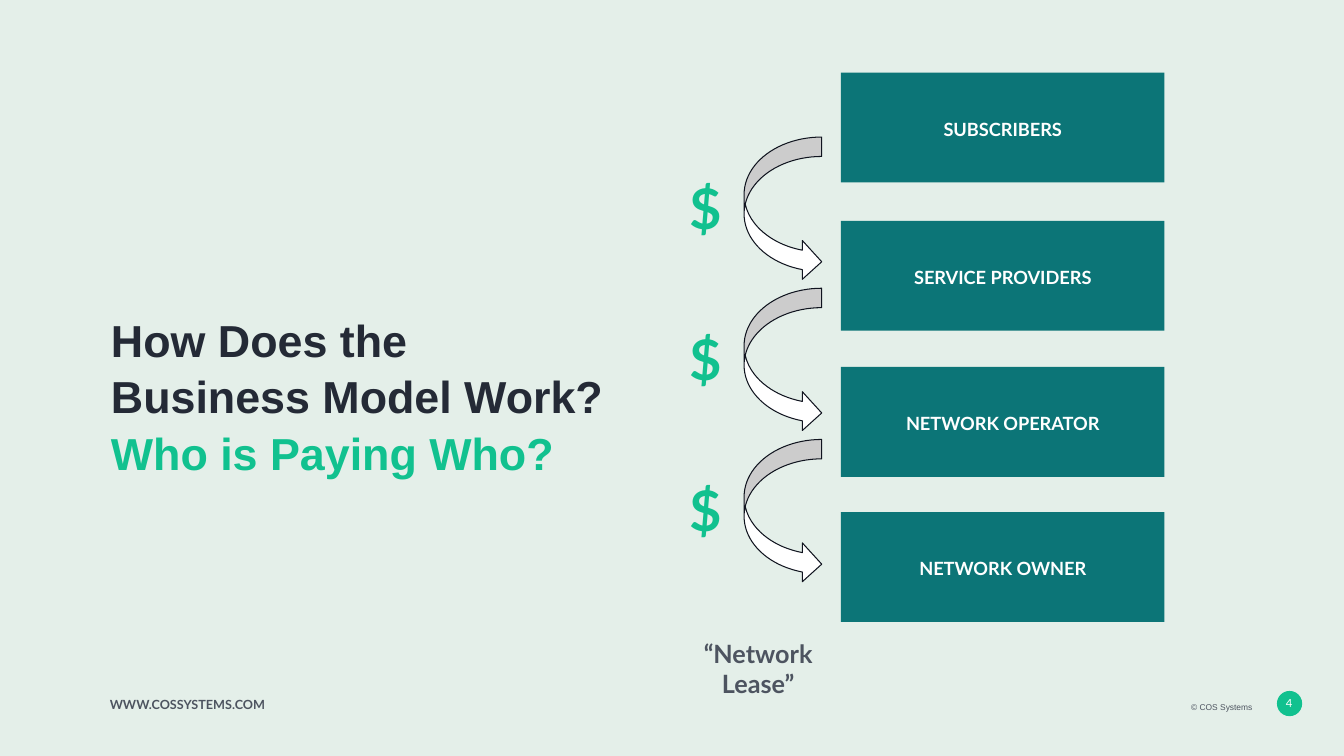
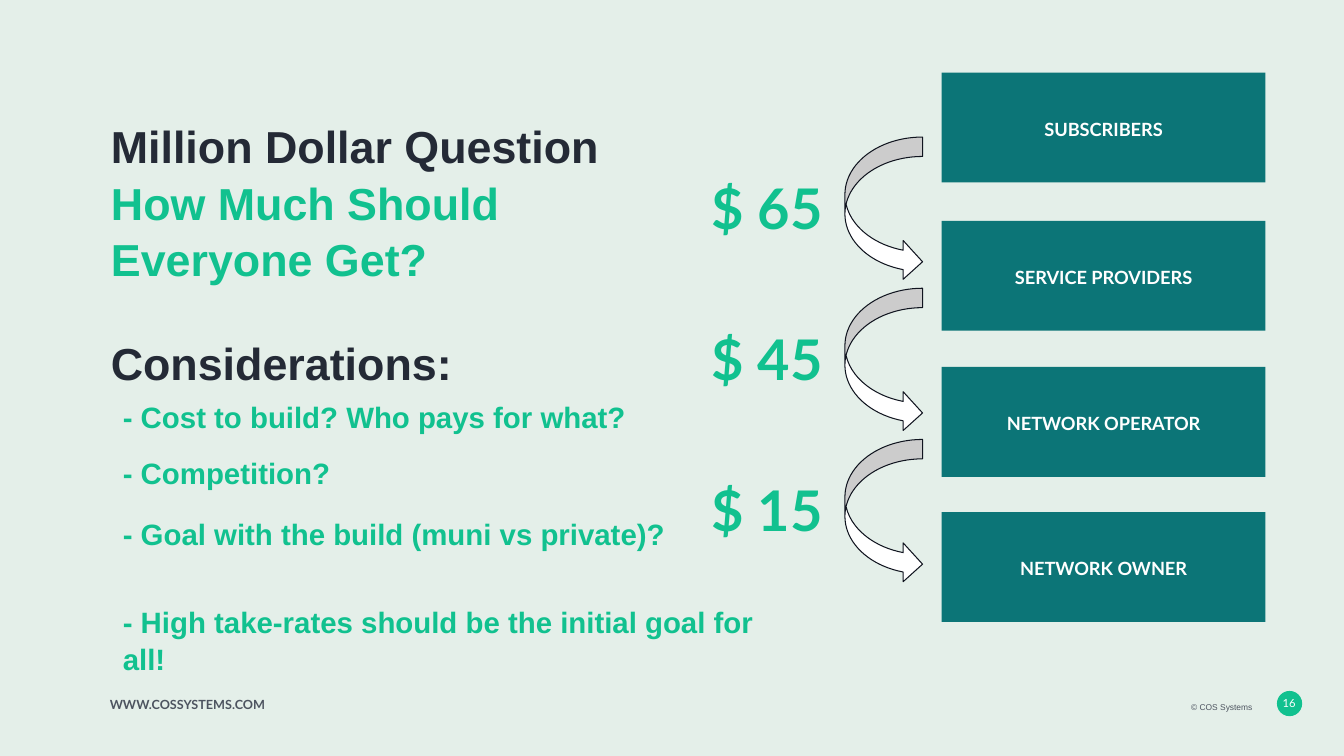
from pptx import Presentation
from pptx.dml.color import RGBColor
from pptx.enum.shapes import MSO_SHAPE
from pptx.enum.text import MSO_ANCHOR, MSO_AUTO_SIZE, PP_ALIGN
from pptx.util import Inches, Pt

MINT = RGBColor(0xE4, 0xEF, 0xE9)
GREEN = RGBColor(0x11, 0xC1, 0x8F)
TEAL = RGBColor(0x0C, 0x75, 0x77)
NAVY = RGBColor(0x24, 0x2A, 0x36)
GRAY = RGBColor(0x4D, 0x54, 0x60)
INK = RGBColor(0x10, 0x14, 0x1F)
WHITE = RGBColor(0xFF, 0xFF, 0xFF)

HEADING = {"name": "Arial", "size": Pt(32), "bold": True}
CONSIDERATION = {"name": "Arial", "size": Pt(21), "bold": True}
ROLE = {"name": "Lato", "size": Pt(13), "bold": True}
AMOUNT = {"name": "Lato", "size": Pt(40), "bold": True}
LEASE = {"name": "Lato", "size": Pt(18), "bold": True}
ADDRESS = {"name": "Lato", "size": Pt(9), "bold": True}
COPYRIGHT = {"name": "Arial", "size": Pt(6)}
PAGE_NUMBER = {"name": "Lato", "size": Pt(8)}

ROLE_TOPS = {
    "SUBSCRIBERS": 0.72,
    "SERVICE PROVIDERS": 2.19,
    "NETWORK OPERATOR": 3.64,
    "NETWORK OWNER": 5.08,
}
PAYMENT_TOP, PAYMENT_STEP = 1.62, 1.5


def set_font(font, style, color):
    for attribute, value in style.items():
        setattr(font, attribute, value)
    font.color.rgb = color


def set_frame(frame, anchor=MSO_ANCHOR.TOP, inset=0.05):
    settings = {
        "word_wrap": True,
        "auto_size": MSO_AUTO_SIZE.NONE,
        "vertical_anchor": anchor,
        "margin_left": Inches(0.1),
        "margin_right": Inches(0.1),
        "margin_top": Inches(inset),
        "margin_bottom": Inches(inset),
    }
    for attribute, value in settings.items():
        setattr(frame, attribute, value)


def write(paragraph, text, style, color, align=PP_ALIGN.LEFT, spacing=1.0):
    paragraph.alignment = align
    paragraph.line_spacing = spacing
    run = paragraph.add_run()
    run.text = text
    set_font(run.font, style, color)


def add_text(slide, box, text, style, color, align=PP_ALIGN.LEFT,
             spacing=1.0, anchor=MSO_ANCHOR.TOP, inset=0.05):
    frame = slide.shapes.add_textbox(*map(Inches, box)).text_frame
    set_frame(frame, anchor, inset)
    write(frame.paragraphs[0], text, style, color, align, spacing)


def add_preset(slide, preset, box, fill, line=None):
    shape = slide.shapes.add_shape(preset, *map(Inches, box))
    shape.shadow.inherit = False
    shape.fill.solid()
    shape.fill.fore_color.rgb = fill
    if line is None:
        shape.line.fill.background()
    else:
        shape.line.color.rgb = line
        shape.line.width = Pt(0.75)
    return shape


def add_title(slide, top, question, emphasis):
    """Place a title whose second part is green on a new line."""
    title = slide.shapes.title
    title.left, title.top = Inches(1), Inches(top)
    title.width, title.height = Inches(5.19), Inches(1.79)
    set_frame(title.text_frame, MSO_ANCHOR.MIDDLE)
    paragraph = title.text_frame.paragraphs[0]
    write(paragraph, question, HEADING, NAVY, spacing=1.05)
    paragraph.add_line_break()
    write(paragraph, emphasis, HEADING, GREEN, spacing=1.05)


def add_footer(slide, number):
    add_preset(slide, MSO_SHAPE.OVAL, (12.67, 6.86, 0.24, 0.24), GREEN, GREEN)
    add_text(slide, (12.47, 6.77, 0.63, 0.41), number, PAGE_NUMBER, WHITE,
             PP_ALIGN.CENTER, anchor=MSO_ANCHOR.MIDDLE)
    add_text(slide, (8.21, 6.9, 4.31, 0.2), "© COS Systems", COPYRIGHT, GRAY,
             PP_ALIGN.RIGHT, 1.15)
    add_text(slide, (0.99, 6.86, 3.69, 0.25), "WWW.COSSYSTEMS.COM", ADDRESS, GRAY)


def add_payment_chain(slide, left, amounts, amount_left, amount_width):
    """Stack the roles and link each to the next with an arrow and amount."""
    for role, top in ROLE_TOPS.items():
        block = add_preset(slide, MSO_SHAPE.RECTANGLE, (left, top, 3.21, 1.09), TEAL)
        set_frame(block.text_frame, MSO_ANCHOR.MIDDLE, 0.1)
        write(block.text_frame.paragraphs[0], role, ROLE, WHITE,
              PP_ALIGN.CENTER, 1.15)
    for index, amount in enumerate(amounts):
        top = PAYMENT_TOP + index * PAYMENT_STEP
        arrow = add_preset(slide, MSO_SHAPE.CURVED_UP_ARROW,
                           (left - 1.29, top + 0.07, 1.43, 0.77), WHITE, INK)
        arrow.rotation = 90
        add_text(slide, (amount_left, top, amount_width, 0.77), amount,
                 AMOUNT, GREEN, inset=0.1)


def add_considerations(slide):
    add_text(slide, (1, 3.35, 6.11, 0.46), "Considerations:", HEADING, NAVY,
             spacing=1.05, anchor=MSO_ANCHOR.MIDDLE)
    frame = slide.shapes.add_textbox(
        Inches(1.12), Inches(3.89), Inches(6.46), Inches(2.8)).text_frame
    set_frame(frame)
    considerations = (
        ("- Cost to build? Who pays for what?", 0),
        ("- Competition?", 14),
        ("- Goal with the build (muni vs private)?", 17),
        ("- High take-rates should be the initial goal for all!", 36),
    )
    for index, (text, gap) in enumerate(considerations):
        paragraph = frame.add_paragraph() if index else frame.paragraphs[0]
        paragraph.space_before = Pt(gap)
        write(paragraph, text, CONSIDERATION, GREEN, spacing=1.05)


def add_slide(deck, number, title_top, question, emphasis):
    slide = deck.slides.add_slide(deck.slide_layouts[5])
    add_title(slide, title_top, question, emphasis)
    add_footer(slide, number)
    return slide


def main():
    deck = Presentation()
    deck.slide_width, deck.slide_height = Inches(13.33), Inches(7.5)
    background = deck.slide_master.background.fill
    background.solid()
    background.fore_color.rgb = MINT

    payers = add_slide(deck, "4", 3.02, "How Does the Business Model Work?",
                       "Who is Paying Who?")
    add_payment_chain(payers, 8.34, ["$"] * 3, 6.74, 0.54)
    add_text(payers, (6.74, 6.23, 1.56, 0.77), "“Network Lease”", LEASE, GRAY,
             PP_ALIGN.CENTER, inset=0.1)

    shares = add_slide(deck, "16", 1.1, "Million Dollar Question",
                       "How Much Should Everyone Get?")
    add_payment_chain(shares, 9.34, ["$ 65", "$ 45", "$ 15"], 6.96, 1.32)
    add_considerations(shares)

    deck.save("out.pptx")


if __name__ == "__main__":
    main()
